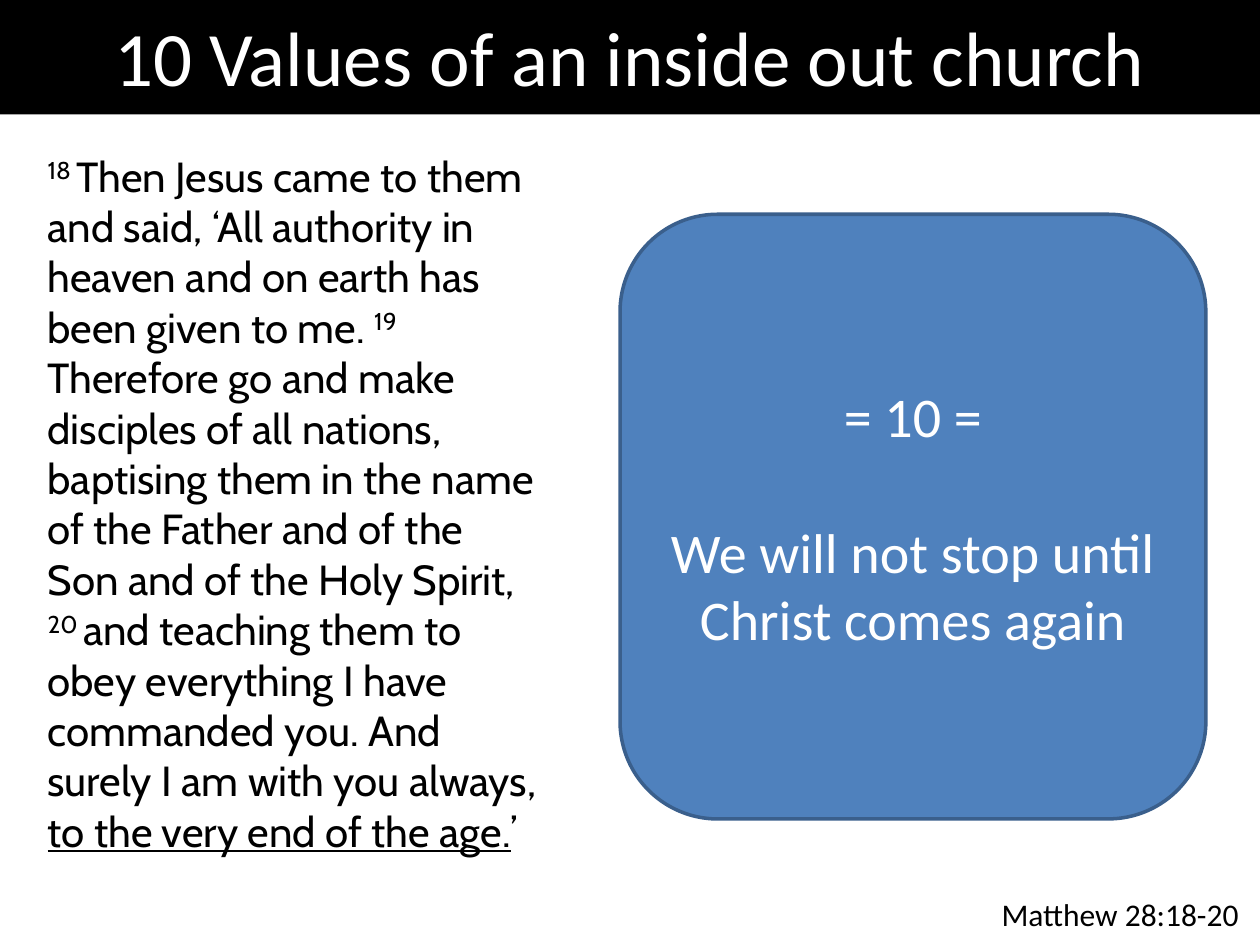
from pptx import Presentation
from pptx.dml.color import RGBColor
from pptx.enum.shapes import MSO_SHAPE
from pptx.enum.text import MSO_ANCHOR, PP_ALIGN
from pptx.util import Cm, Pt

COLOURS = {"black": "000000", "white": "FFFFFF", "card": "4F81BD", "card_line": "3A5F8C"}

# Verse number, then its text
VERSES = [
    ("18", "Then Jesus came to them and said, ‘All authority in heaven and on earth "
           "has been given to me. "),
    ("19", "Therefore go and make disciples of all nations, baptising them in the name "
           "of the Father and of the Son and of the Holy Spirit, "),
    ("20", "and teaching them to obey everything I have commanded you. "
           "And surely I am with you always, "),
]
VERSE_ENDING = "to the very end of the age."


def colour(name):
    return RGBColor.from_string(COLOURS[name])


def style(paragraph, size, colour_name, font_name="Calibri", align=PP_ALIGN.LEFT):
    paragraph.alignment = align
    paragraph.font.size = Pt(size)
    paragraph.font.name = font_name
    paragraph.font.color.rgb = colour(colour_name)


def add_run(paragraph, text):
    run = paragraph.add_run()
    run.text = text
    return run


def add_panel(slide, kind, box, fill):
    shape = slide.shapes.add_shape(kind, *box)
    shape.shadow.inherit = False
    shape.fill.solid()
    shape.fill.fore_color.rgb = colour(fill)
    shape.line.fill.background()
    shape.text_frame.word_wrap = True
    shape.text_frame.vertical_anchor = MSO_ANCHOR.MIDDLE
    return shape


def add_title_bar(slide, box):
    bar = add_panel(slide, MSO_SHAPE.RECTANGLE, box, "black")
    paragraph = bar.text_frame.paragraphs[0]
    paragraph.text = "10 Values of an inside out church"
    style(paragraph, 44, "white", align=PP_ALIGN.CENTER)


def add_passage(slide, box):
    text_frame = slide.shapes.add_textbox(*box).text_frame
    text_frame.word_wrap = True
    paragraph = text_frame.paragraphs[0]
    style(paragraph, 24, "black", "Cabin")
    for number, text in VERSES:
        # Raised verse number, tied to the next word by a no-break space
        number_run = add_run(paragraph, number + " ")
        number_run._r.get_or_add_rPr().set("baseline", "30000")
        add_run(paragraph, text)
    add_run(paragraph, VERSE_ENDING).font.underline = True
    add_run(paragraph, "’")


def add_value_card(slide, box):
    card = add_panel(slide, MSO_SHAPE.ROUNDED_RECTANGLE, box, "card")
    card.line.color.rgb = colour("card_line")
    card.line.width = Pt(2)
    number = card.text_frame.paragraphs[0]
    number.text = "= 10 ="
    statement = card.text_frame.add_paragraph()
    statement.text = "We will not stop until Christ comes again"
    statement.space_before = Pt(39)
    for paragraph in (number, statement):
        style(paragraph, 32, "white", align=PP_ALIGN.CENTER)


def add_reference(slide, box):
    text_frame = slide.shapes.add_textbox(*box).text_frame
    text_frame.word_wrap = False
    paragraph = text_frame.paragraphs[0]
    paragraph.text = "Matthew 28:18-20"
    style(paragraph, 18, "black")


def main():
    presentation = Presentation()
    presentation.slide_width = Cm(25.4)
    presentation.slide_height = Cm(19.05)
    slide = presentation.slides.add_slide(presentation.slide_layouts[6])

    add_passage(slide, (Cm(0.71), Cm(2.9), Cm(10.39), Cm(14.63)))
    add_title_bar(slide, (Cm(0), Cm(-0.08), presentation.slide_width, Cm(2.39)))
    add_reference(slide, (Cm(19.94), Cm(17.91), Cm(5.36), Cm(1.02)))
    add_value_card(slide, (Cm(12.5), Cm(4.32), Cm(11.81), Cm(12.19)))

    presentation.save("out.pptx")


if __name__ == "__main__":
    main()
